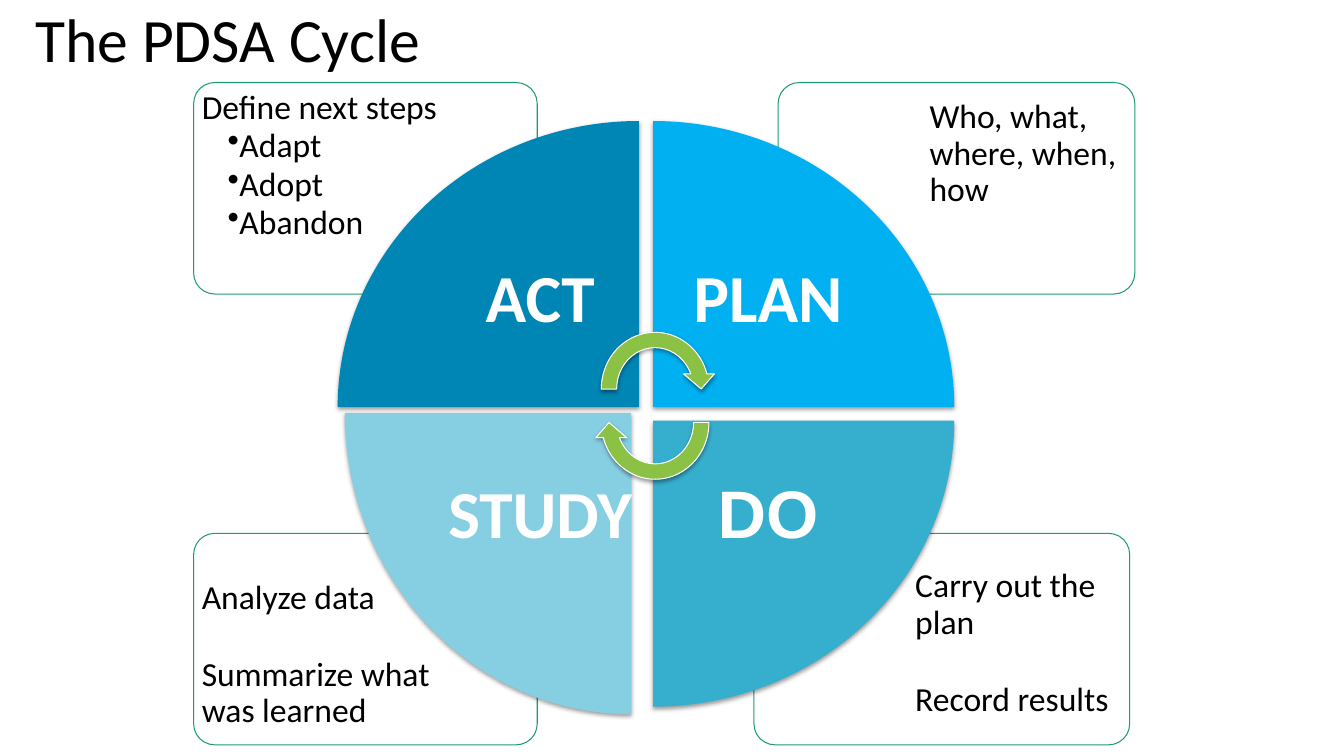
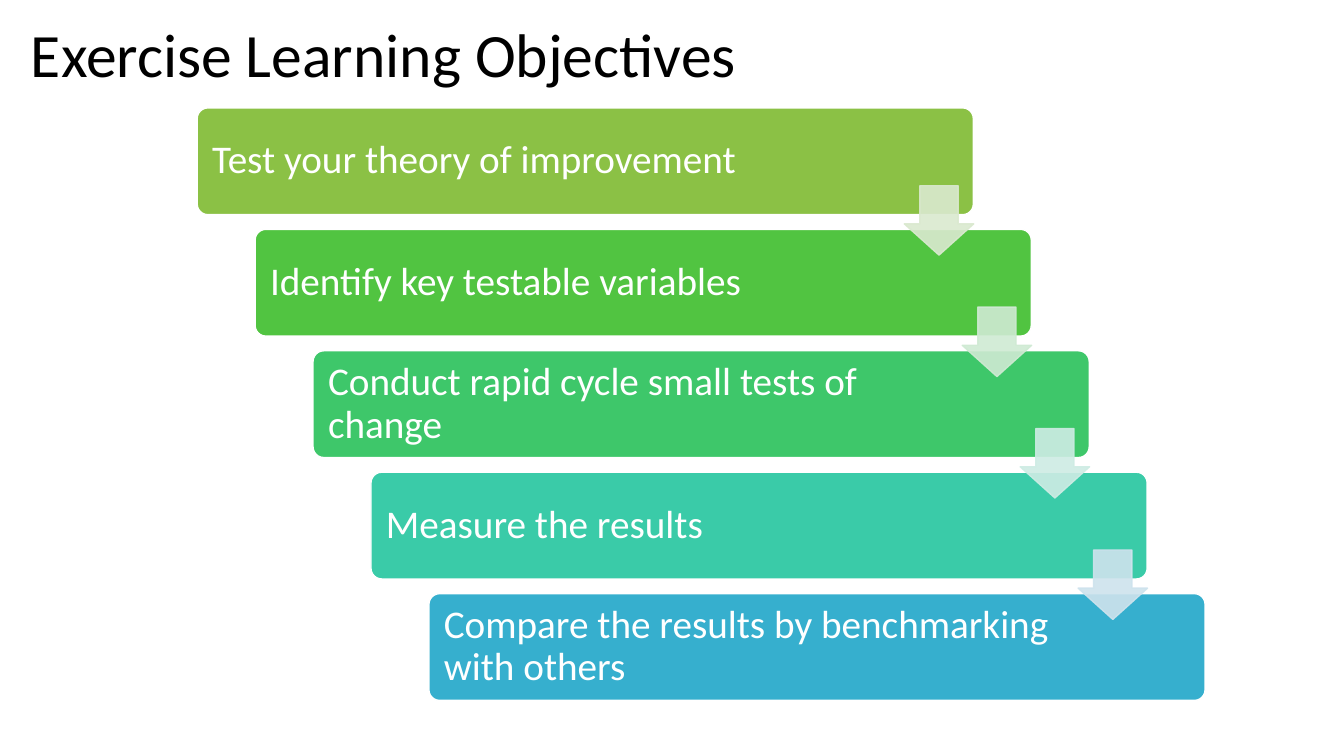
from lxml.etree import SubElement
from pptx import Presentation
from pptx.dml.color import RGBColor as RGB
from pptx.enum.shapes import MSO_SHAPE as Preset
from pptx.enum.text import MSO_ANCHOR as Anchor, MSO_AUTO_SIZE as AutoSize, PP_ALIGN as Align
from pptx.oxml.ns import qn
from pptx.util import Cm, Pt

WHITE = RGB(0xFF, 0xFF, 0xFF)
BLACK = RGB(0x00, 0x00, 0x00)
CARD_EDGE = RGB(0x1D, 0x9A, 0x78)
GREEN = RGB(0x8B, 0xC1, 0x45)
TEAL = RGB(0x36, 0xAF, 0xCE)
DEEP_BLUE = RGB(0x00, 0x86, 0xB4)
SKY_BLUE = RGB(0x00, 0xB0, 0xF0)
PALE_BLUE = RGB(0x86, 0xCF, 0xE2)

CYCLE_TITLE = ("The PDSA Cycle", (0.64, 0.66, 18.1, 1.37))
OBJECTIVES_TITLE = ("Exercise Learning Objectives", (0.53, 0.41, 21.9, 2.01))

GAP = 29
CARDS = [
    ((19, 13.44, 9.47, 5.33), (3.91, 0.74, 0.1, 0),
     [("Carry out the plan", 0, False), ("Record results", GAP, False)]),
    ((4.88, 13.44, 8.66, 5.33), (0.05, 1.04, 1.5, 0),
     [("Analyze data", 0, False), ("Summarize what was learned", GAP, False)]),
    ((19.61, 2.08, 8.99, 5.33), (3.66, 0.28, 0, 0),
     [("Who, what, where, when, how", 0, False)]),
    ((4.88, 2.08, 8.66, 5.33), (0.05, 0.05, 1.19, 0),
     [("Define next steps", 0, False), ("Adapt", 1.4, True),
      ("Adopt", 1.4, True), ("Abandon", 1.4, True)]),
]

PHASES = [
    ("ACT", DEEP_BLUE, "Calibri", 0, 0, (8.51, 3.05, 7.59, 7.21)),
    ("PLAN", SKY_BLUE, "Calibri", 1, 0, (16.46, 3.05, 7.59, 7.21)),
    ("DO", TEAL, "Arial", 1, 1, (16.46, 10.6, 7.59, 7.21)),
    ("STUDY", PALE_BLUE, "Calibri", 0, 1, (8.69, 10.41, 7.21, 7.59)),
]
LABEL_LEFTS = (10.72, 16.46)
LABEL_TOPS = (4.88, 10.31)
LABEL_SIZE = (5.79, 5.41)
TURN_ARROWS = [(8.18, 0), (9.02, 180)]

OBJECTIVES = [
    ("Test your theory of improvement", GREEN, RGB(0xDA, 0xE9, 0xCF)),
    ("Identify key testable variables", RGB(0x51, 0xC4, 0x41), RGB(0xCF, 0xEA, 0xD3)),
    ("Conduct rapid cycle small tests of change", RGB(0x3E, 0xC7, 0x6A), RGB(0xCE, 0xEC, 0xE4)),
    ("Measure the results", RGB(0x3A, 0xCB, 0xA8), RGB(0xCE, 0xE3, 0xED)),
    ("Compare the results by benchmarking with others", TEAL, None),
]
BAR_START = (4.97, 2.72)
BAR_STEP = (1.46, 3.06)
BAR_SIZE = (19.56, 2.69)
ARROW_OFFSET = (17.82, 1.96)
ARROW_SIDE = 1.75


def cms(lengths):
    return [Cm(length) for length in lengths]


def write_text(frame, paragraphs, size=24, font="Calibri", color=BLACK, bold=False,
               align=Align.LEFT, anchor=Anchor.TOP, margins=(0.25, 0.13, 0.25, 0.13)):
    frame.word_wrap = True
    frame.auto_size = AutoSize.NONE
    frame.vertical_anchor = anchor
    (frame.margin_left, frame.margin_top,
     frame.margin_right, frame.margin_bottom) = cms(margins)
    for index, (text, before, bulleted) in enumerate(paragraphs):
        paragraph = frame.add_paragraph() if index else frame.paragraphs[0]
        if bulleted:
            properties = paragraph._p.get_or_add_pPr()
            properties.set("marL", str(Cm(0.95)))
            properties.set("indent", str(Cm(-0.3)))
            SubElement(properties, qn("a:buChar"), char="•")
        paragraph.alignment = align
        paragraph.line_spacing = 0.9
        paragraph.space_before = Pt(before)
        run = paragraph.add_run()
        run.text = text
        run.font.name = font
        run.font.size = Pt(size)
        run.font.bold = bold
        run.font.color.rgb = color


def add_alpha(color_parent, percent):
    SubElement(color_parent.find(".//" + qn("a:srgbClr")), qn("a:alpha"),
               val=str(percent * 1000))


def draw(slide, preset, box, fill, edge=None, edge_width=0.75, adjustments=()):
    shape = slide.shapes.add_shape(preset, *cms(box))
    shape.shadow.inherit = False
    shape.fill.solid()
    shape.fill.fore_color.rgb = fill
    if edge is None:
        shape.line.fill.background()
    else:
        shape.line.color.rgb = edge
        shape.line.width = Pt(edge_width)
    for index, value in enumerate(adjustments):
        shape.adjustments[index] = value
    return shape


def cast_shadow(shape):
    effects = shape._element.spPr.find(qn("a:effectLst"))
    shadow = SubElement(effects, qn("a:outerShdw"), blurRad=str(Pt(3.1)), dist=str(Pt(1.6)),
                        dir="5400000", rotWithShape="0")
    SubElement(shadow, qn("a:srgbClr"), val="000000")
    add_alpha(shadow, 38)


def titled_slide(deck, title, box):
    slide = deck.slides.add_slide(deck.slide_layouts[5])
    heading = slide.shapes.title
    heading.left, heading.top, heading.width, heading.height = cms(box)
    write_text(heading.text_frame, [(title, 0, False)], size=44, anchor=Anchor.BOTTOM)
    return slide


def build_cycle(deck):
    slide = titled_slide(deck, *CYCLE_TITLE)
    for box, margins, paragraphs in CARDS:
        card = draw(slide, Preset.ROUNDED_RECTANGLE, box, WHITE, CARD_EDGE, adjustments=[0.1])
        write_text(card.text_frame, paragraphs, margins=margins)
    for phase, fill, font, column, row, box in PHASES:
        wedge = draw(slide, Preset.PIE_WEDGE, box, fill)
        cast_shadow(wedge)
        placement = wedge._element.spPr.find(qn("a:xfrm"))
        placement.set("flipH", str(column))
        placement.set("flipV", str(row))
        label = slide.shapes.add_textbox(
            *cms((LABEL_LEFTS[column], LABEL_TOPS[row], *LABEL_SIZE)))
        write_text(label.text_frame, [(phase, 0, False)], size=48, font=font, color=WHITE,
                   bold=True, align=Align.CENTER, anchor=Anchor.MIDDLE, margins=[0.38] * 4)
    for top, rotation in TURN_ARROWS:
        turn = draw(slide, Preset.CIRCULAR_ARROW, (14.96, top, 3.1, 3.25), GREEN, WHITE)
        turn.rotation = rotation
        cast_shadow(turn)


def build_objectives(deck):
    slide = titled_slide(deck, *OBJECTIVES_TITLE)
    corners = [tuple(start + index * step for start, step in zip(BAR_START, BAR_STEP))
               for index in range(len(OBJECTIVES))]
    for corner, (objective, fill, _) in zip(corners, OBJECTIVES):
        bar = draw(slide, Preset.ROUNDED_RECTANGLE, corner + BAR_SIZE, fill, WHITE, 1, [0.1])
        write_text(bar.text_frame, [(objective, 0, False)], size=28, color=WHITE,
                   anchor=Anchor.MIDDLE, margins=(0.3, 0.3, 3.5, 0.3))
    for (left, top), (_, _, tint) in zip(corners[:-1], OBJECTIVES):
        box = (left + ARROW_OFFSET[0], top + ARROW_OFFSET[1], ARROW_SIDE, ARROW_SIDE)
        arrow = draw(slide, Preset.DOWN_ARROW, box, tint, tint, 1, (0.55, 0.45))
        add_alpha(arrow._element.spPr.find(qn("a:solidFill")), 90)
        add_alpha(arrow._element.spPr.find(qn("a:ln")), 90)


def main():
    deck = Presentation()
    deck.slide_width, deck.slide_height = cms((33.87, 19.05))
    build_cycle(deck)
    build_objectives(deck)
    deck.save("out.pptx")


if __name__ == "__main__":
    main()
